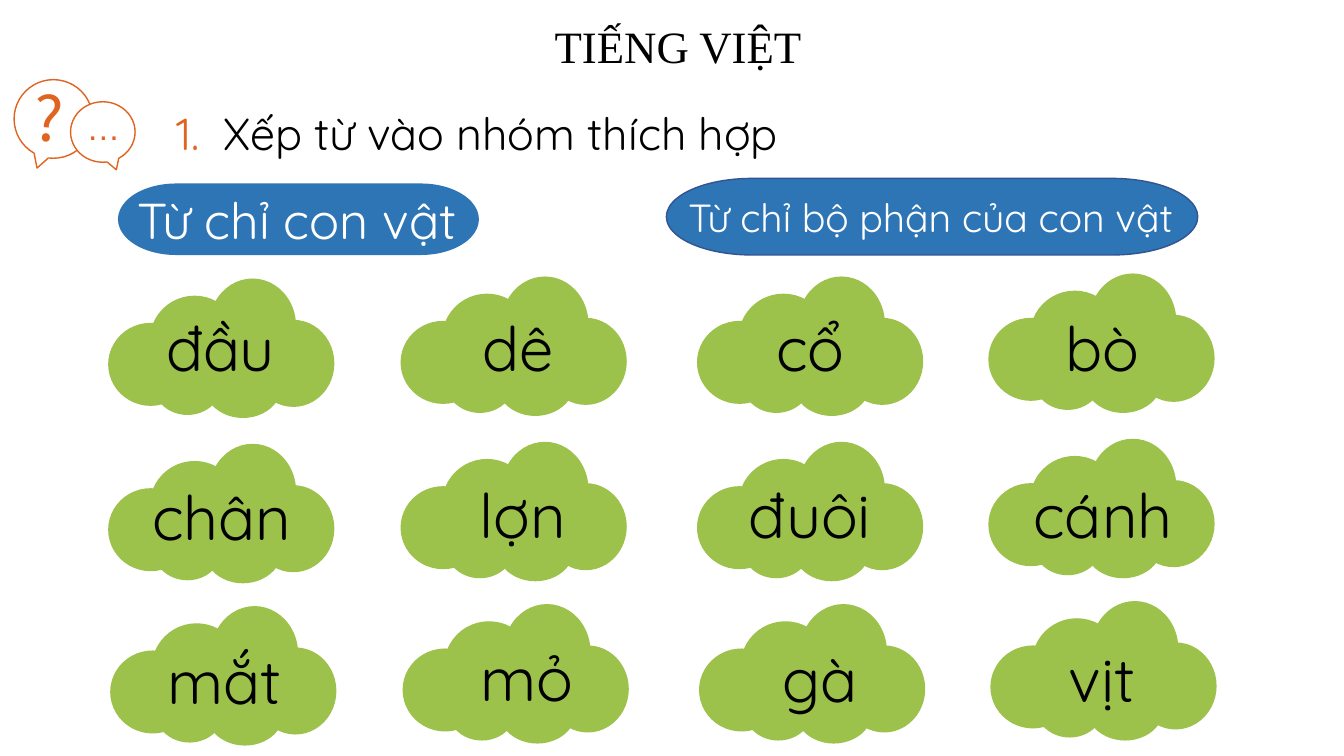
"""Build a Vietnamese word-sorting slide with two banners and twelve word clouds."""
from lxml import etree
from pptx import Presentation
from pptx.dml.color import RGBColor
from pptx.enum.shapes import MSO_SHAPE
from pptx.enum.text import MSO_AUTO_SIZE, PP_ALIGN
from pptx.oxml.ns import qn
from pptx.util import Pt

PX = 9144
BLACK = RGBColor(0x00, 0x00, 0x00)
WHITE = RGBColor(0xFF, 0xFF, 0xFF)
ORANGE = RGBColor(0xE0, 0x63, 0x1F)
BLUE = RGBColor(0x2E, 0x75, 0xB6)
NAVY = RGBColor(0x32, 0x54, 0x91)
GREEN = RGBColor(0x9C, 0xC2, 0x4C)

BUBBLE = MSO_SHAPE.OVAL_CALLOUT
PILL = MSO_SHAPE.FLOWCHART_TERMINATOR
PUFF = MSO_SHAPE.FLOWCHART_CONNECTOR
GROW = MSO_AUTO_SIZE.SHAPE_TO_FIT_TEXT
CENTER = PP_ALIGN.CENTER
FONT = "Quicksand"

PUFFS = [
    (0, 44, 83, 81), (41, 17, 88, 88), (100, 0, 85, 93),
    (143, 41, 80, 85), (45, 76, 66, 58), (95, 73, 76, 64),
]
COLS = [(108, 277), (398, 275), (692, 275), (981, 272)]
ROWS = [(0, 0), (0, 164), (2, 325)]
WORDS = [
    [("đầu", 155, 303, 148), ("dê", 469, 303, 148),
     ("cổ", 760, 303, 148), ("bò", 1047, 303, 148)],
    [("chân", 141, 470, 178), ("lợn", 466, 468, 148),
     ("đuôi", 733, 468, 148), ("cánh", 1015, 468, 194)],
    [("mắt", 156, 633, 169), ("mỏ", 467, 630, 148),
     ("gà", 766, 631, 148), ("vịt", 1050, 631, 148)],
]


def scale(*nums):
    """Turn px lengths into EMU."""
    return [num * PX for num in nums]


def add_form(shapes, kind, box, fill, edge=None):
    """Add a filled preset shape, outlined when an edge colour is given."""
    form = shapes.add_shape(kind, *scale(*box))
    form.shadow.inherit = False
    form.fill.solid()
    form.fill.fore_color.rgb = fill
    if edge is None:
        form.line.fill.background()
    else:
        form.line.color.rgb = edge
        form.line.width = Pt(1)
    return form


def add_label(shapes, text, box, size, color=BLACK, font=FONT):
    """Add a wrapped one-paragraph text box."""
    label = shapes.add_textbox(*scale(*box))
    frame = label.text_frame
    frame.word_wrap = True
    frame.auto_size = GROW
    frame.text = text
    style(frame.paragraphs[0].runs[0], size, color, font)
    return label


def style(run, size, color, font=FONT):
    """Set the size, colour and font of a run."""
    run.font.size = Pt(size)
    run.font.color.rgb = color
    run.font.name = font


def add_task(shapes, num, text, box, gap):
    """Add the numbered task, its wording set at a tab stop."""
    label = add_label(shapes, num, box, 32, ORANGE)
    para = label.text_frame.paragraphs[0]
    run = para.add_run()
    run.text = "\t" + text
    style(run, 32, BLACK)
    tabs = etree.SubElement(para._p.get_or_add_pPr(), qn("a:tabLst"))
    etree.SubElement(tabs, qn("a:tab"), pos=str(gap * PX), algn="l")


def add_icon(shapes):
    """Add the two speech bubbles with their marks."""
    add_form(shapes, BUBBLE, (14, 79, 78, 78), WHITE, ORANGE)
    reply = add_form(shapes, BUBBLE, (70, 101, 64, 60), WHITE, ORANGE)
    reply.adjustments[0] = 0.21
    add_label(shapes, "…", (76, 101, 68, 91), 24, ORANGE, "Arial")
    mark = add_label(shapes, "?", (22, 75, 73, 158), 44, ORANGE,
                     "Noto Sans CJK KR")
    mark.rotation = 3.8


def add_cloud(shapes, left, top, word):
    """Add a grouped cloud of puffs carrying a word."""
    cloud = shapes.add_group_shape().shapes
    for x, y, wide, high in PUFFS:
        add_form(cloud, PUFF, (left + x, top + y, wide, high), GREEN, GREEN)
    text, x, y, wide = word
    add_label(cloud, text, (x, y, wide, 158), 44)


def main():
    """Build and save the slide."""
    deck = Presentation()
    deck.slide_width, deck.slide_height = scale(1333, 750)
    shapes = deck.slides.add_slide(deck.slide_layouts[6]).shapes

    add_icon(shapes)
    add_task(shapes, "1.", "Xếp từ vào nhóm thích hợp", (165, 100, 714, 104), 47)
    add_form(shapes, PILL, (117, 182, 358, 71), BLUE)
    add_label(shapes, "Từ chỉ con vật", (127, 183, 409, 131), 36, WHITE)
    add_form(shapes, PILL, (661, 177, 527, 76), BLUE, NAVY)
    add_label(shapes, "Từ chỉ bộ phận của con vật",
              (673, 187, 549, 59), 28, WHITE)

    for (shift, drop), words in zip(ROWS, WORDS):
        for (left, top), word in zip(COLS, words):
            add_cloud(shapes, left + shift, top + drop, word)

    title = add_label(shapes, "TIẾNG VIỆT", (328, 14, 689, 64), 32,
                      font="Times New Roman")
    title.text_frame.paragraphs[0].alignment = CENTER
    deck.save("out.pptx")


if __name__ == "__main__":
    main()
